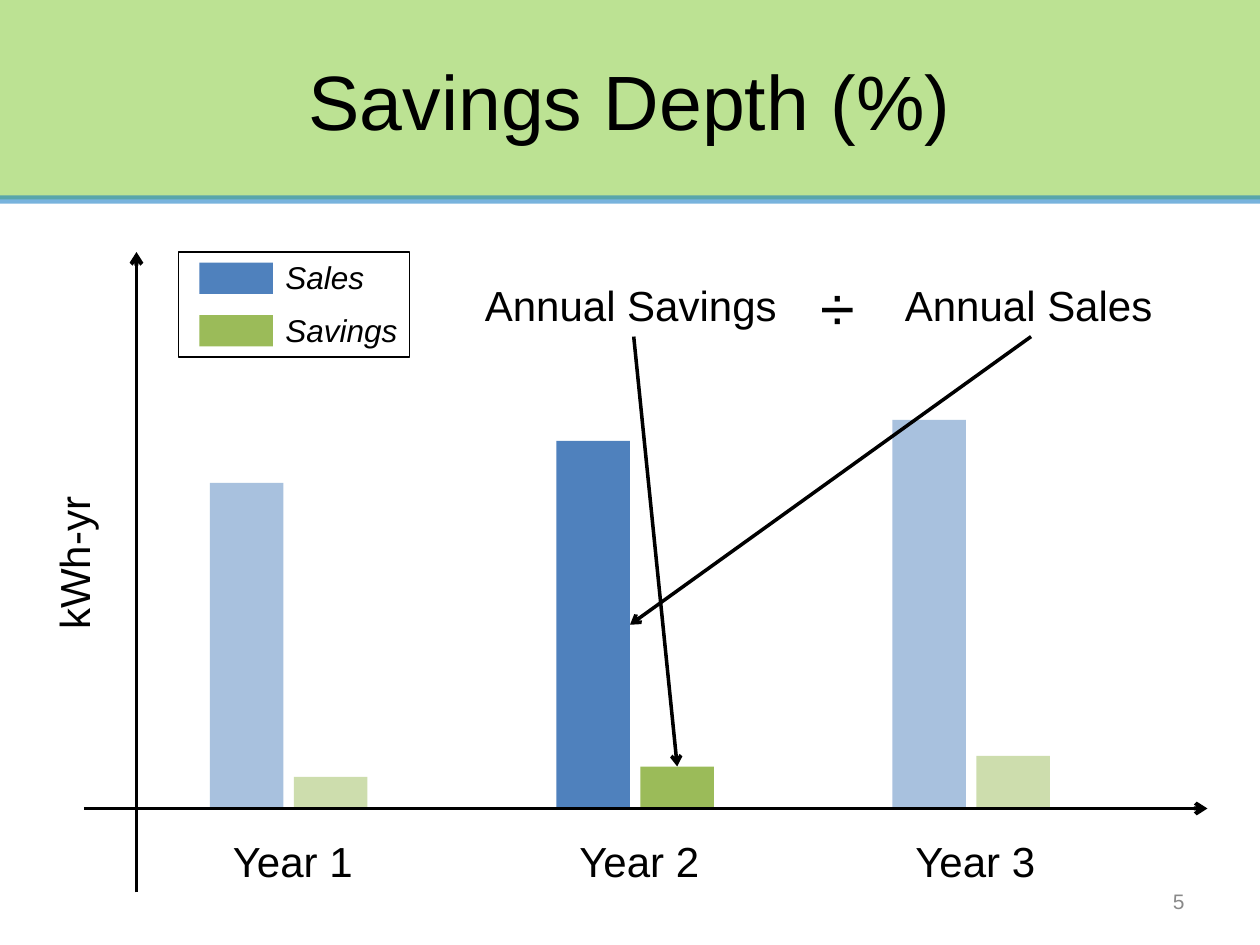
from lxml.etree import SubElement
from pptx import Presentation
from pptx.dml.color import RGBColor
from pptx.enum.shapes import MSO_CONNECTOR as CONN, MSO_SHAPE as SHAPE
from pptx.enum.text import MSO_ANCHOR as ANCHOR, PP_ALIGN as ALIGN
from pptx.oxml.ns import qn
from pptx.util import Pt

BLACK = RGBColor(0x00, 0x00, 0x00)
GRAY = RGBColor(0x89, 0x89, 0x89)
BAND_GREEN = RGBColor(0x92, 0xD0, 0x50)
RULE_BLUE = RGBColor(0x00, 0x70, 0xC0)
SALES_BLUE = RGBColor(0x4F, 0x81, 0xBD)
SAVINGS_GREEN = RGBColor(0x9B, 0xBB, 0x59)

TITLE = "Savings Depth (%)"
PAGE = "5"
Y_LABEL = "kWh-yr"
YEARS = [
    ("Year 1", 120, 186, 18, 49),
    ("Year 2", 318, 210, 24, 100),
    ("Year 3", 510, 222, 30, 49),
]
LEGEND = [("Sales", SALES_BLUE, 64), ("Savings", SAVINGS_GREEN, 83.5)]
BASELINE, BAR_W, BAR_STEP = 462, 42, 48
LEGEND_TOP, LEGEND_STEP = 144, 30

prs = Presentation()
prs.slide_width, prs.slide_height = Pt(720), Pt(540)
s = prs.slides.add_slide(prs.slide_layouts[6])


def set_alpha(color_format, percent):
    if percent < 100:
        color = color_format._xFill.find(qn("a:srgbClr"))
        SubElement(color, qn("a:alpha"), val=str(percent * 1000))


def add_rect(x, y, w, h, color=None, alpha=100):
    sp = s.shapes.add_shape(SHAPE.RECTANGLE, Pt(x), Pt(y), Pt(w), Pt(h))
    sp.shadow.inherit = False
    if color is None:
        sp.fill.background()
        sp.line.color.rgb = BLACK
        sp.line.width = Pt(0.75)
    else:
        sp.fill.solid()
        sp.fill.fore_color.rgb = color
        set_alpha(sp.fill.fore_color, alpha)
        sp.line.fill.background()
    return sp


def add_text(text, x, y, w, h, size, color=BLACK, italic=False,
             align=ALIGN.LEFT, anchor=ANCHOR.TOP, wrap=False):
    sp = s.shapes.add_textbox(Pt(x), Pt(y), Pt(w), Pt(h))
    tf = sp.text_frame
    tf.word_wrap = wrap
    tf.vertical_anchor = anchor
    p = tf.paragraphs[0]
    p.text = text
    p.alignment = align
    p.font.name = "Arial"
    p.font.size = Pt(size)
    p.font.italic = italic
    p.font.color.rgb = color
    return sp


def add_line(x1, y1, x2, y2, width, color=BLACK, alpha=100, arrow=True):
    c = s.shapes.add_connector(CONN.STRAIGHT, Pt(x1), Pt(y1), Pt(x2), Pt(y2))
    c.line.width = Pt(width)
    c.line.fill.solid()
    c.line.color.rgb = color
    set_alpha(c.line.color, alpha)
    if arrow:
        SubElement(c.line._ln, qn("a:tailEnd"), type="arrow")
    SubElement(c._element.spPr, qn("a:effectLst"))
    return c


def join(start, end, end_site):
    c = add_line(0, 0, 10, 10, 2)
    c.begin_connect(start, 2)
    c.end_connect(end, end_site)


add_rect(0, 0, 720, 114, BAND_GREEN, 61)
add_line(0, 114, 720, 114, 4.75, RULE_BLUE, 53, arrow=False)
add_text(TITLE, 36, 12, 648, 90, 44,
         align=ALIGN.CENTER, anchor=ANCHOR.MIDDLE, wrap=True)
add_text(PAGE, 516, 500.5, 168, 28.75, 12, GRAY,
         align=ALIGN.RIGHT, anchor=ANCHOR.MIDDLE, wrap=True)

add_line(78, 510, 78, 144, 2.25)
add_text(Y_LABEL, -3.6, 303.1, 91.4, 36.35, 24).rotation = 270

add_rect(102, LEGEND_TOP, 132, 60)
for i, (name, color, width) in enumerate(LEGEND):
    y = LEGEND_TOP + i * LEGEND_STEP
    add_rect(114, y + 6, BAR_W, 18, color)
    add_text(name, 156, y, width, 29, 18, italic=True)

bars = {}
for year, x, sales, savings, alpha in YEARS:
    bars[year] = (
        add_rect(x, BASELINE - sales, BAR_W, sales, SALES_BLUE, alpha),
        add_rect(x + BAR_STEP, BASELINE - savings, BAR_W, savings,
                 SAVINGS_GREEN, alpha),
    )
    add_text(year, x + 6, 474, 83.5, 36.35, 24)

add_text("÷", 462, 150, 34.5, 51, 36)
sales_term = add_text("Annual Sales", 510, 156, 158.4, 36.35, 24)
savings_term = add_text("Annual Savings", 270, 156, 184.3, 36.35, 24)

add_line(48, BASELINE, 690, BASELINE, 2.25)
sales_bar, savings_bar = bars["Year 2"]
join(savings_term, savings_bar, 0)
join(sales_term, sales_bar, 3)

prs.save("out.pptx")
